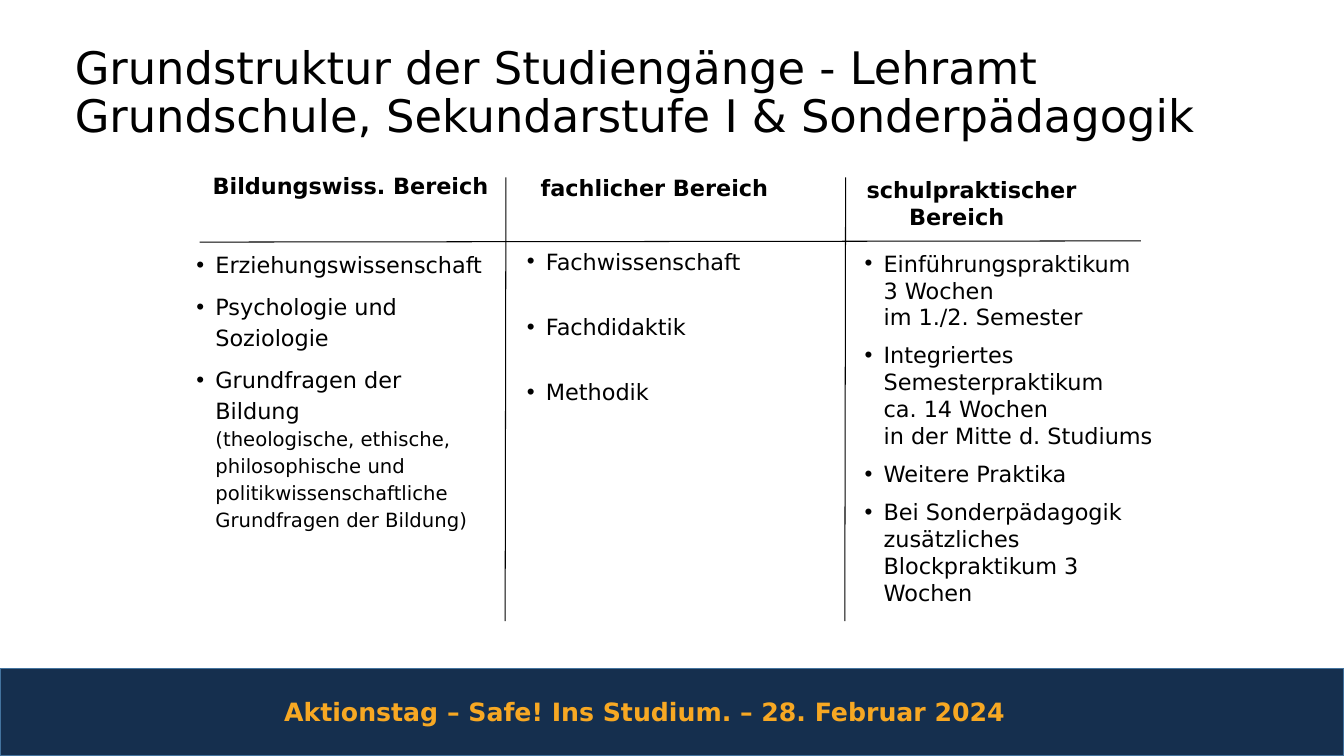
from copy import deepcopy

from lxml import etree
from pptx import Presentation
from pptx.dml.color import RGBColor
from pptx.enum.shapes import MSO_CONNECTOR, MSO_SHAPE
from pptx.enum.text import MSO_ANCHOR, PP_ALIGN
from pptx.oxml.ns import qn
from pptx.util import Cm, Pt

FONT = "DejaVu Sans"
BLACK = "000000"


def color(hex_string):
    return RGBColor.from_string(hex_string)


def write(shape, paragraphs, size=16, bold=False, fill=BLACK, align=PP_ALIGN.LEFT,
          line_spacing=1.0, space_before=0, hanging=0, bullet=None, wrap=True, inset=None):
    """Fill a shape with paragraphs; each is a list of lines: a text or (text, size)."""
    frame = shape.text_frame
    frame.word_wrap = wrap
    frame.vertical_anchor = MSO_ANCHOR.TOP
    if inset is not None:
        frame.margin_left = frame.margin_top = inset
        frame.margin_right = frame.margin_bottom = inset
    for index, lines in enumerate(paragraphs):
        paragraph = frame.paragraphs[0] if index == 0 else frame.add_paragraph()
        paragraph.alignment = align
        paragraph.line_spacing = line_spacing
        paragraph.space_before = Pt(space_before if index else 0)
        properties = paragraph._p.get_or_add_pPr()
        if hanging:
            properties.set("marL", str(Cm(hanging)))
            properties.set("indent", str(-Cm(hanging)))
        if bullet:
            etree.SubElement(properties, qn("a:buFont")).set("typeface", "Arial")
            etree.SubElement(properties, qn("a:buChar")).set("char", bullet)
        for position, line in enumerate(lines):
            text, line_size = line if isinstance(line, tuple) else (line, size)
            if position:
                # A line break keeps the format of the run before it
                paragraph.add_line_break()
                paragraph._p[-1].append(deepcopy(run.font._element))
            run = paragraph.add_run()
            run.text = text
            run.font.name = FONT
            run.font.size = Pt(line_size)
            run.font.bold = bold
            run.font.color.rgb = color(fill)


presentation = Presentation()
presentation.slide_width = Cm(33.87)
presentation.slide_height = Cm(19.05)
slide = presentation.slides.add_slide(presentation.slide_layouts[5])

# Title
title = slide.shapes.title
title.left, title.top, title.width, title.height = Cm(1.63), Cm(1.02), Cm(30.28), Cm(3.68)
write(title, [["Grundstruktur der Studiengänge - Lehramt Grundschule, "
               "Sekundarstufe I & Sonderpädagogik"]], size=32, line_spacing=0.9)

# Footer band
band = slide.shapes.add_shape(MSO_SHAPE.RECTANGLE, 0, Cm(16.84), Cm(33.87), Cm(2.21))
band.shadow.inherit = False
band.fill.solid()
band.fill.fore_color.rgb = color("152F4E")
band.line.color.rgb = color("43739E")
band.line.width = Pt(1)
footer = slide.shapes.add_textbox(Cm(6.91), Cm(17.42), Cm(19.63), Cm(1.02))
write(footer, [["Aktionstag – Safe! Ins Studium. – 28. Februar 2024"]],
      size=18, bold=True, fill="F7A823")

# Rules between the columns and below the headings
for x1, y1, x2, y2 in [(12.75, 4.47, 12.73, 15.65),
                       (21.31, 4.47, 21.29, 15.65),
                       (5.03, 6.1, 28.75, 6.07)]:
    rule = slide.shapes.add_connector(MSO_CONNECTOR.STRAIGHT, Cm(x1), Cm(y1), Cm(x2), Cm(y2))
    rule.line.color.rgb = color(BLACK)
    rule.line.width = Pt(0.75)
    etree.SubElement(rule._element.spPr, qn("a:effectLst"))

# Column headings
headings = [
    ("Bildungswiss. Bereich", (5.11, 4.22, 7.54, 0.94), {"wrap": False}),
    ("fachlicher Bereich", (10.74, 4.27, 11.51, 0.94), {"align": PP_ALIGN.CENTER}),
    ("schulpraktischer Bereich", (21.84, 4.45, 6.81, 1.6), {"hanging": 1.07, "inset": 0}),
]
for heading, place, options in headings:
    box = slide.shapes.add_textbox(*map(Cm, place))
    write(box, [[heading]], bold=True, **options)

# Column contents
columns = [
    ((4.7, 6.1, 7.75, 7.57), {"line_spacing": 1.15, "space_before": 8}, [
        ["Erziehungswissenschaft"],
        ["Psychologie und Soziologie"],
        ["Grundfragen der Bildung",
         ("(theologische, ethische, philosophische und politikwissenschaftliche "
          "Grundfragen der Bildung)", 14)],
    ]),
    ((13.03, 6.12, 7.01, 4.32), {"space_before": 27.5}, [
        ["Fachwissenschaft"],
        ["Fachdidaktik"],
        ["Methodik"],
    ]),
    ((21.54, 6.17, 7.82, 10.19), {"space_before": 8}, [
        ["Einführungspraktikum", "3 Wochen", "im 1./2. Semester"],
        ["Integriertes ", "Semesterpraktikum", "ca. 14 Wochen", "in der Mitte d. Studiums"],
        ["Weitere Praktika"],
        ["Bei Sonderpädagogik", "zusätzliches Blockpraktikum 3 Wochen"],
    ]),
]
for place, options, items in columns:
    box = slide.shapes.add_textbox(*map(Cm, place))
    write(box, items, hanging=0.48, bullet="•", **options)

presentation.save("out.pptx")
